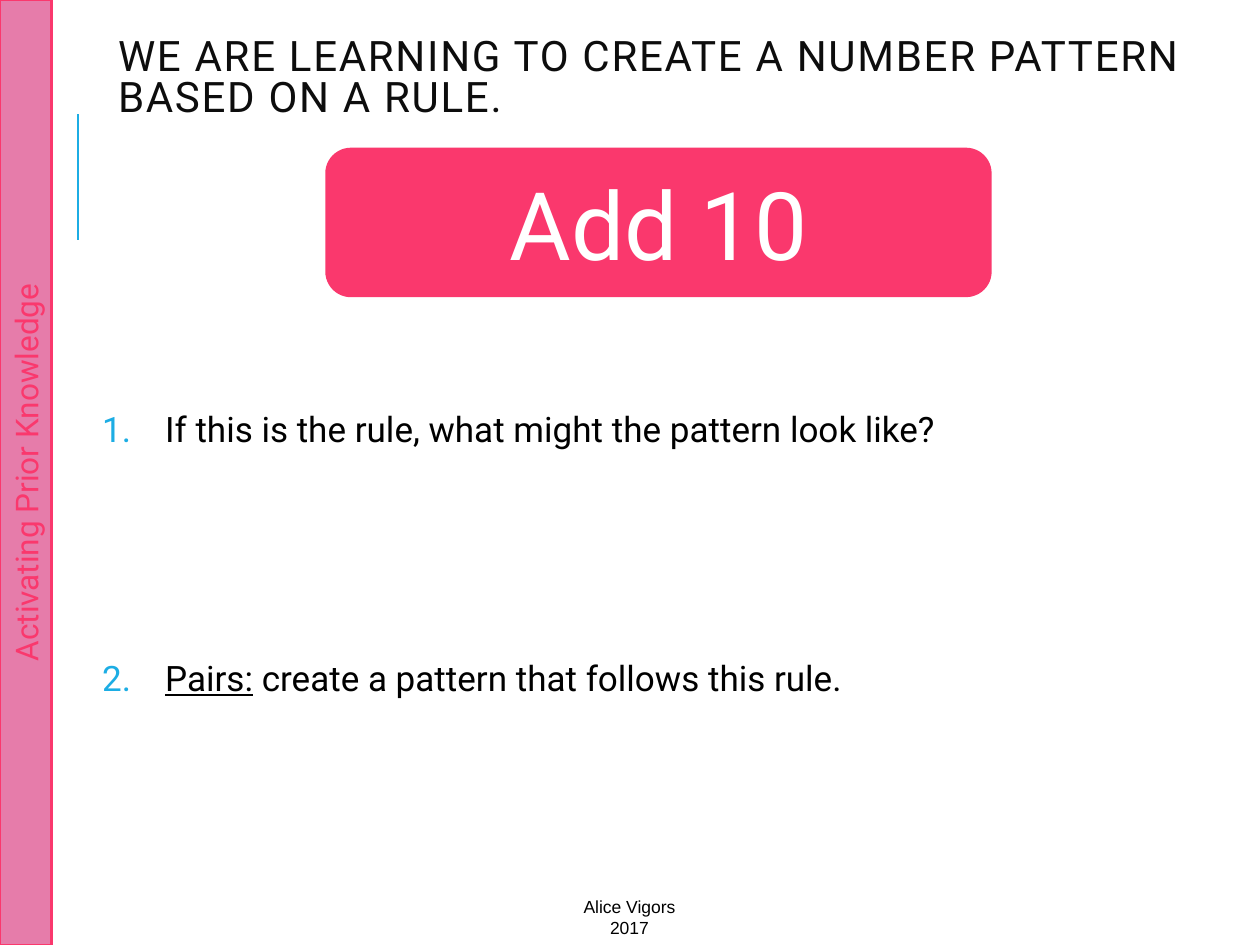
from pptx import Presentation
from pptx.dml.color import RGBColor
from pptx.enum.shapes import MSO_CONNECTOR as Link, MSO_SHAPE as Kind
from pptx.enum.text import MSO_ANCHOR as Anchor, PP_ALIGN as Align
from pptx.oxml.ns import qn
from pptx.util import Cm, Pt
from lxml.etree import SubElement

PINK, ROSE, BLUE = "FA386D", "E67CAA", "1CADE4"
BLACK, INK, WHITE = "000000", "0D0D0D", "FFFFFF"


def color(code):
    return RGBColor.from_string(code)


def style(run, size, code, font="Roboto"):
    run.font.size = Pt(size)
    run.font.name = font
    run.font.color.rgb = color(code)


def add_block(slide, kind, box, fill, text, size, ink):
    block = slide.shapes.add_shape(kind, *map(Cm, box))
    block.shadow.inherit = False
    block.fill.solid()
    block.fill.fore_color.rgb = color(fill)
    block.line.color.rgb = color(PINK)
    block.line.width = Pt(1.25)
    frame = block.text_frame
    frame.text = text
    frame.vertical_anchor = Anchor.MIDDLE
    para = frame.paragraphs[0]
    para.alignment = Align.CENTER
    style(para.runs[0], size, ink)
    return block


def add_text(slide, box, text=""):
    frame = slide.shapes.add_textbox(*map(Cm, box)).text_frame
    frame.word_wrap = True
    frame.text = text
    return frame


def add_rule(slide, x, top, end):
    rule = slide.shapes.add_connector(Link.STRAIGHT, Cm(x), Cm(end), Cm(x), Cm(top))
    rule.line.color.rgb = color(BLUE)
    rule.line.width = Pt(1.5)
    SubElement(rule._element.spPr, qn("a:effectLst"))


def number(para):
    props = para._p.get_or_add_pPr()
    props.set("marL", str(Cm(1.27)))
    props.set("indent", str(-Cm(1.27)))
    tint = SubElement(props, qn("a:buClr"))
    SubElement(tint, qn("a:srgbClr"), val=BLUE)
    SubElement(props, qn("a:buFont"), typeface="+mj-lt")
    SubElement(props, qn("a:buAutoNum"), type="arabicPeriod")


def add_tasks(slide, box, tasks):
    frame = add_text(slide, box)
    frame.margin_left = frame.margin_right = Cm(0.13)
    for i, (lead, rest, gap) in enumerate(tasks):
        para = frame.add_paragraph() if i else frame.paragraphs[0]
        para.line_spacing = 0.9
        para.space_before, para.space_after = Pt(gap), Pt(2)
        number(para)
        for part, under in ((lead, True), (rest, False)):
            if part:
                run = para.add_run()
                run.text = part
                style(run, 20, BLACK)
                run.font.underline = under


def add_title(slide, box, text):
    frame = add_text(slide, box, text)
    frame.vertical_anchor = Anchor.MIDDLE
    frame.margin_bottom = Cm(0.94)
    para = frame.paragraphs[0]
    para.line_spacing = 0.8
    style(para.runs[0], 24, INK)
    para.runs[0].font._element.set("spc", "100")


def add_footer(slide, box, text):
    para = add_text(slide, box, text).paragraphs[0]
    para.alignment = Align.CENTER
    style(para.runs[0], 10, BLACK, "Arial")


def main():
    deck = Presentation()
    deck.slide_width, deck.slide_height = Cm(25.4), Cm(19.05)
    slide = deck.slides.add_slide(deck.slide_layouts[6])

    # Accent line beside the heading
    add_rule(slide, 1.57, 2.29, 4.83)

    # Questions, with working space between them
    add_tasks(slide, (1.93, 8.18, 22.28, 10.29), [
        ("", "If this is the rule, what might the pattern look like?", 12),
        ("Pairs:", " create a pattern that follows this rule.", 119),
    ])

    # Learning goal
    add_title(slide, (2.13, 1.02, 22.28, 2),
              "WE ARE LEARNING TO CREATE A NUMBER PATTERN BASED ON A RULE.")

    # Side band and rule card
    band = add_block(slide, Kind.RECTANGLE, (0, 0, 1.04, 19.05), ROSE,
                     "Activating Prior Knowledge", 18, PINK)
    band.text_frame._txBody.bodyPr.set("vert", "vert270")
    add_block(slide, Kind.ROUNDED_RECTANGLE, (6.58, 3, 13.39, 2.97), PINK,
              "Add 10", 54, WHITE)

    # Author and year
    add_footer(slide, (11.33, 17.93, 2.72, 1.12), "Alice Vigors 2017")

    deck.save("out.pptx")


if __name__ == "__main__":
    main()
